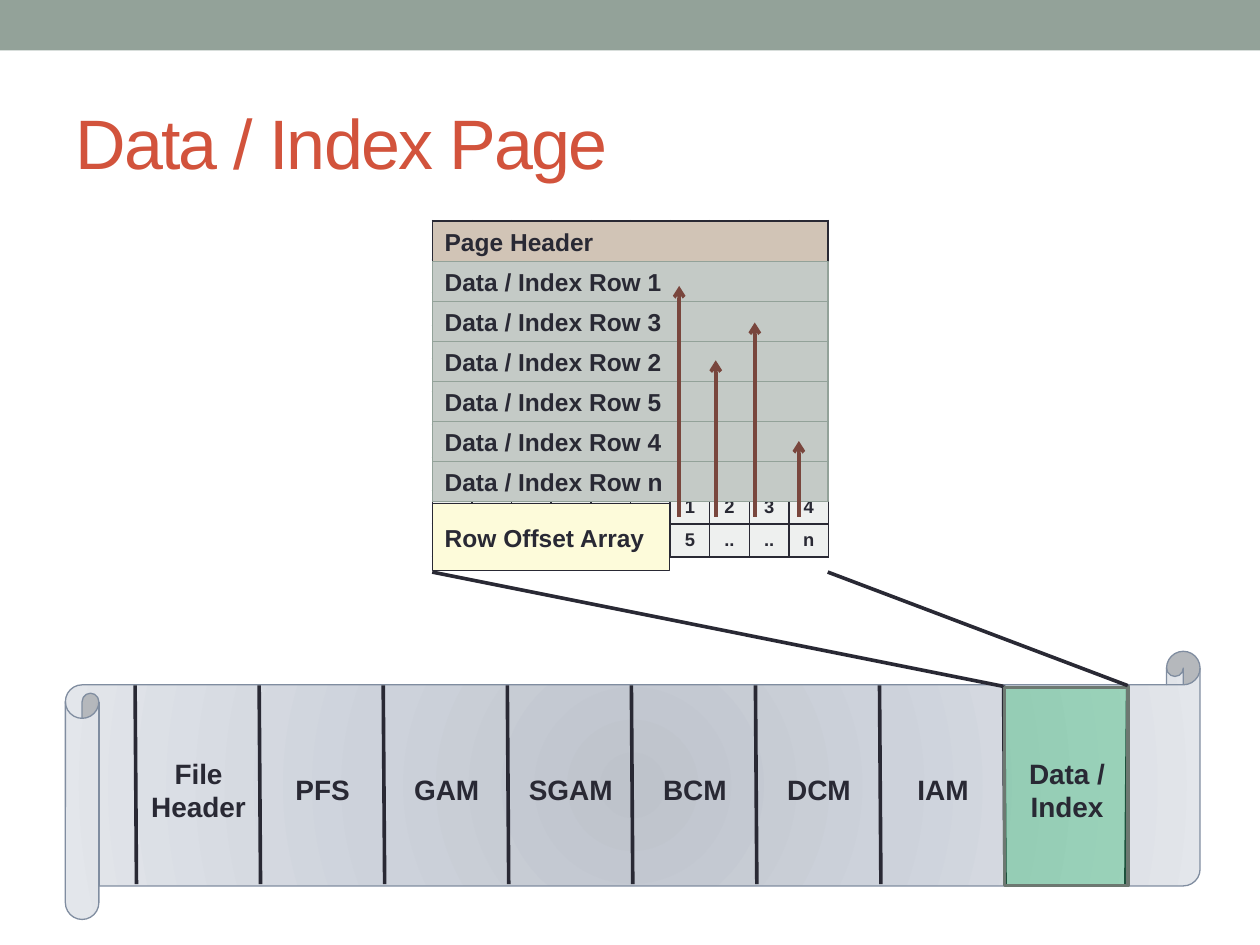
from lxml import etree
from pptx import Presentation
from pptx.dml.color import RGBColor
from pptx.enum.shapes import MSO_CONNECTOR, MSO_SHAPE
from pptx.enum.text import MSO_ANCHOR, PP_ALIGN
from pptx.oxml import parse_xml
from pptx.oxml.ns import nsdecls, qn
from pptx.util import Pt

RECT, SCROLL = MSO_SHAPE.RECTANGLE, MSO_SHAPE.HORIZONTAL_SCROLL
STRAIGHT = MSO_CONNECTOR.STRAIGHT
LEFT, CENTER = PP_ALIGN.LEFT, PP_ALIGN.CENTER
MIDDLE = MSO_ANCHOR.MIDDLE

FONT = "Arial"
INK = "292934"
SAGE = "93A299"
CELL = "EEF0EF"
HEAVY = 2.08

PAGE_ROWS = ["1", "3", "2", "5", "4", "n"]
OFFSETS = [["1", "2", "3", "4"], ["5", "..", "..", "n"]]
POINTERS = [(388.1, 163.4), (409, 205.9), (431.3, 184.3), (456.5, 252)]
FILE_PAGES = ["File\nHeader", "PFS", "GAM", "SGAM", "BCM", "DCM", "IAM", "Data / Index"]


def rgb(color):
    return RGBColor.from_string(color)


def write(frame, text, size, color=INK, bold=True, align=LEFT):
    frame.text = text
    for paragraph in frame.paragraphs:
        paragraph.alignment = align
        for run in paragraph.runs:
            font = run.font
            font.name, font.size, font.bold = FONT, Pt(size), bold
            font.color.rgb = rgb(color)


def add_shape(slide, kind, box, fill, line=None, width=0.75):
    shape = slide.shapes.add_shape(kind, *map(Pt, box))
    shape.shadow.inherit = False
    shape.fill.solid()
    shape.fill.fore_color.rgb = rgb(fill)
    if line:
        shape.line.color.rgb = rgb(line)
        shape.line.width = Pt(width)
    else:
        shape.line.fill.background()
    return shape


def add_bar(slide, box, text, fill, line):
    bar = add_shape(slide, RECT, box, fill, line)
    frame = bar.text_frame
    frame.word_wrap = True
    frame.vertical_anchor = MIDDLE
    frame.margin_top = frame.margin_bottom = Pt(2.9)
    write(frame, text, 14)


def add_label(slide, box, text, size, **style):
    frame = slide.shapes.add_textbox(*map(Pt, box)).text_frame
    frame.word_wrap = True
    frame.vertical_anchor = MIDDLE
    write(frame, text, size, **style)
    return frame


def add_line(slide, start, end, color=INK, arrow=False):
    line = slide.shapes.add_connector(STRAIGHT, *map(Pt, start + end))
    line.line.color.rgb = rgb(color)
    line.line.width = Pt(HEAVY)
    if arrow:
        etree.SubElement(line.line._get_or_add_ln(), qn("a:tailEnd"), type="arrow")
    etree.SubElement(line._element.spPr, qn("a:effectLst"))


def style_cell(cell, text):
    cell.fill.solid()
    cell.fill.fore_color.rgb = rgb(CELL)
    cell.vertical_anchor = MIDDLE
    cell.margin_left = cell.margin_right = Pt(2)
    cell.margin_top = cell.margin_bottom = Pt(2)
    if text:
        write(cell.text_frame, text, 10.5, align=CENTER)
    else:
        # Keep empty cells as low as the filled ones
        paragraph = cell.text_frame.paragraphs[0]._p
        etree.SubElement(paragraph, qn("a:endParaRPr"), sz="1050")
    properties = cell._tc.get_or_add_tcPr()
    for position, side in enumerate(("lnL", "lnR", "lnT", "lnB")):
        properties.insert(position, parse_xml(
            f'<a:{side} {nsdecls("a")} w="12700"><a:solidFill>'
            f'<a:srgbClr val="{INK}"/></a:solidFill></a:{side}>'))


def heading(slide, box):
    left, top, width, height = box
    add_shape(slide, RECT, (left, top, width, 28.8), SAGE)
    frame = add_label(slide, (left + 36, top + 41.8, width - 72, 77.8),
                      "Data / Index Page", 40, color="D2533C", bold=False)
    frame.paragraphs[0].runs[0].font._element.set("spc", "-100")


def offset_grid(slide, box):
    rows, columns = 10, 10
    first_row, row_height = 22.3, 18.9
    table = slide.shapes.add_table(rows, columns, *map(Pt, box)).table
    table.first_row = table.horz_banding = False
    for column in table.columns:
        column.width = Pt(box[2] / columns)
    for index, row in enumerate(table.rows):
        row.height = Pt(row_height if index else first_row)
    first_offset_row = rows - len(OFFSETS)
    first_offset_column = columns - len(OFFSETS[0])
    for r in range(rows):
        for c in range(columns):
            filled = r >= first_offset_row and c >= first_offset_column
            style_cell(table.cell(r, c),
                       OFFSETS[r - first_offset_row][c - first_offset_column] if filled else "")


def page_detail(slide, box):
    left, top, width, height = box
    pitch = 22.85
    offset_grid(slide, (left, top - 0.5, width + 0.5, 192.4))
    add_bar(slide, (left, top, width, 23.2), "Page Header", "D1C4B6", INK)
    add_bar(slide, (left, top + 161.3, 135.4, 38.2), "Row Offset Array", "FDFBDA", INK)
    for index, row in enumerate(PAGE_ROWS, 1):
        add_bar(slide, (left, top + index * pitch, width, 23),
                f"Data / Index Row {row}", "C4CAC6", SAGE)
    # Pointers from the offset array to the rows
    for x, tip in POINTERS:
        add_line(slide, (x, 295.2), (x, tip), "79463D", arrow=True)


def file_strip(slide, box):
    left, top, width, height = box
    scroll = add_shape(slide, SCROLL, box, "CDD2DB", "808DA0")
    stops = "".join(f'<a:gs pos="{position}"><a:srgbClr val="{color}"/></a:gs>'
                    for position, color in ((0, "BEC3CB"), (45000, "CDD2DB"), (100000, "E3E6EB")))
    properties = scroll._element.spPr
    properties.replace(properties.find(qn("a:solidFill")), parse_xml(
        f'<a:gradFill {nsdecls("a")} rotWithShape="1"><a:gsLst>{stops}</a:gsLst>'
        '<a:path path="circle"><a:fillToRect l="50000" t="50000" r="50000" b="50000"/>'
        '</a:path></a:gradFill>'))

    # Slightly slanted page dividers, the last one leaning the other way
    pitch, first = 70.9, left + 39.8
    line_top, line_bottom = top + 19.5, top + 133
    count = len(FILE_PAGES)
    for index in range(count + 1):
        x = first + index * pitch
        lean = -1 if index == count else 0.8
        add_line(slide, (x, line_top), (x + lean, line_bottom))

    # Highlighted data page
    data_page = add_shape(slide, RECT, (first + (count - 1) * pitch + 0.4, top + 20.6, 70.6, 113.2),
                          "00B050", "6D7871", HEAVY)
    color = data_page._element.spPr.find(qn("a:solidFill"))[0]
    etree.SubElement(color, qn("a:alpha"), val="30000")

    for index, name in enumerate(FILE_PAGES):
        add_label(slide, (first + index * pitch + 0.6, top + 56, 71.3, 46),
                  name, 16, align=CENTER)


def zoom_lines(slide, box):
    left, top, width, height = box
    bottom = top + height
    add_line(slide, (left + 326.2, bottom), (left, top))
    add_line(slide, (left + 397.4, bottom - 0.4), (left + width, top))


def main():
    deck = Presentation()
    deck.slide_width, deck.slide_height = Pt(720), Pt(540)
    slide = deck.slides.add_slide(deck.slide_layouts[6])
    heading(slide, (0, 0, 720, 120))
    file_strip(slide, (37.4, 372.2, 648.4, 153.2))
    zoom_lines(slide, (247, 326.9, 226, 65.3))
    page_detail(slide, (247, 126.6, 226.2, 200))
    deck.save("out.pptx")


if __name__ == "__main__":
    main()
